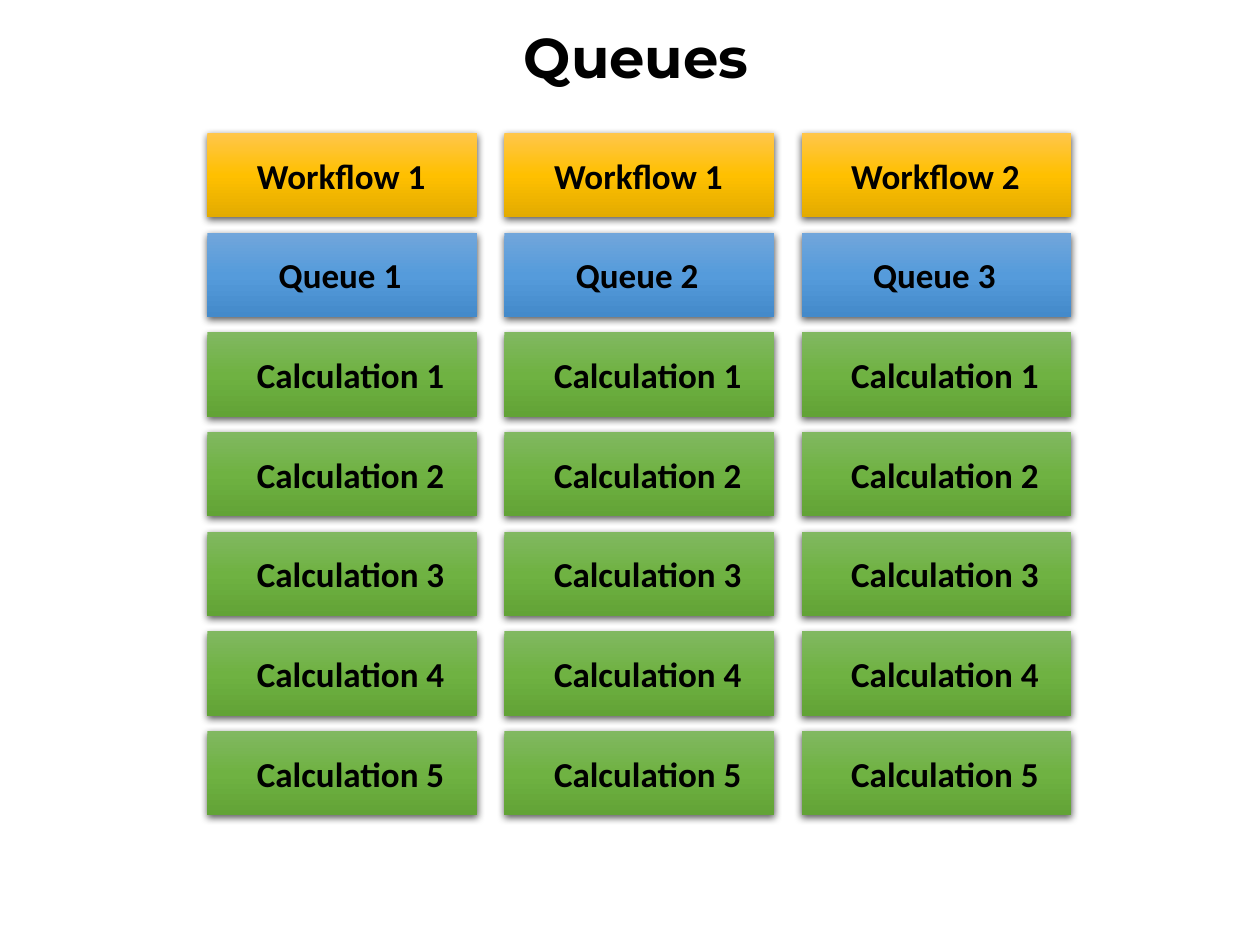
"""Build a slide showing three queues, each with its workflow and calculations."""
import copy
from dataclasses import dataclass

import lxml.etree
import pptx
import pptx.dml.color
import pptx.enum.shapes
import pptx.enum.text
import pptx.oxml.ns
import pptx.slide
import pptx.util

Cm = pptx.util.Cm
Pt = pptx.util.Pt
RGBColor = pptx.dml.color.RGBColor
qn = pptx.oxml.ns.qn

BLACK = RGBColor(0x00, 0x00, 0x00)
AMBER = (RGBColor(0xFF, 0xC6, 0x4B), RGBColor(0xFF, 0xC0, 0x00), RGBColor(0xE3, 0xAB, 0x00))
BLUE = (RGBColor(0x71, 0xA6, 0xDB), RGBColor(0x55, 0x9B, 0xDB), RGBColor(0x44, 0x8A, 0xCA))
GREEN = (RGBColor(0x81, 0xB8, 0x61), RGBColor(0x6F, 0xB2, 0x42), RGBColor(0x62, 0xA3, 0x36))

LEFT, TOP = Cm(4.18), Cm(2.68)
COLUMN_STEP, ROW_STEP = Cm(5.99), Cm(2.01)
CARD_WIDTH, CARD_HEIGHT = Cm(5.44), Cm(1.7)
LABEL_WIDTH, LABEL_HEIGHT = Cm(4.98), Cm(1.12)
LABEL_DROP = Cm(0.3)


@dataclass(frozen=True)
class Row:
    labels: tuple[str, str, str]
    colors: tuple[RGBColor, RGBColor, RGBColor]
    indent: pptx.util.Length = Cm(0.75)


ROWS = [
    Row(("Workflow 1", "Workflow 1", "Workflow 2"), AMBER),
    Row(("Queue 1", "Queue 2", "Queue 3"), BLUE, Cm(1.19)),
    *(Row((f"Calculation {n}",) * 3, GREEN) for n in range(1, 6)),
]


def add_text(slide: pptx.slide.Slide, text: str, left: int, top: int, width: int, height: int,
             *, size: int = 20, font: str = "Calibri", wrap: bool = True) -> None:
    tf = slide.shapes.add_textbox(left, top, width, height).text_frame
    tf.word_wrap = wrap
    tf.auto_size = pptx.enum.text.MSO_AUTO_SIZE.SHAPE_TO_FIT_TEXT
    r = tf.paragraphs[0].add_run()
    r.text = text
    r.font.name = font
    r.font.size = Pt(size)
    r.font.bold = True
    r.font.color.rgb = BLACK


def add_card(slide: pptx.slide.Slide, left: int, top: int, colors: tuple[RGBColor, ...]) -> None:
    sp = slide.shapes.add_shape(pptx.enum.shapes.MSO_SHAPE.RECTANGLE,
                                left, top, CARD_WIDTH, CARD_HEIGHT)
    sp.line.fill.background()
    sp.fill.gradient()
    sp.fill.gradient_angle = 270
    props = sp._element.spPr
    stops = props.find(".//" + qn("a:gsLst"))
    stops.append(copy.deepcopy(stops[-1]))
    for stop, position, color in zip(sp.fill.gradient_stops, (0, 0.5, 1), colors):
        stop.position = position
        stop.color.rgb = color

    sp.shadow.inherit = False
    shadow = lxml.etree.SubElement(
        props.find(qn("a:effectLst")), qn("a:outerShdw"), blurRad=str(Pt(4.5)),
        dist=str(Pt(1.5)), dir="5400000", algn="ctr", rotWithShape="0")
    color = lxml.etree.SubElement(shadow, qn("a:srgbClr"), val=str(BLACK))
    lxml.etree.SubElement(color, qn("a:alpha"), val="63000")


def main() -> None:
    prs = pptx.Presentation()
    prs.slide_width, prs.slide_height = Cm(25.4), Cm(19.05)
    slide = prs.slides.add_slide(prs.slide_layouts[6])
    add_text(slide, "Queues", Cm(10.31), Cm(0.33), Cm(5.21), Cm(1.62),
             size=32, font="Montserrat", wrap=False)
    for i, row in enumerate(ROWS):
        top = TOP + i * ROW_STEP
        for j, label in enumerate(row.labels):
            left = LEFT + j * COLUMN_STEP
            add_card(slide, left, top, row.colors)
            add_text(slide, label, left + row.indent, top + LABEL_DROP,
                     LABEL_WIDTH, LABEL_HEIGHT)
    prs.save("out.pptx")


if __name__ == "__main__":
    main()
